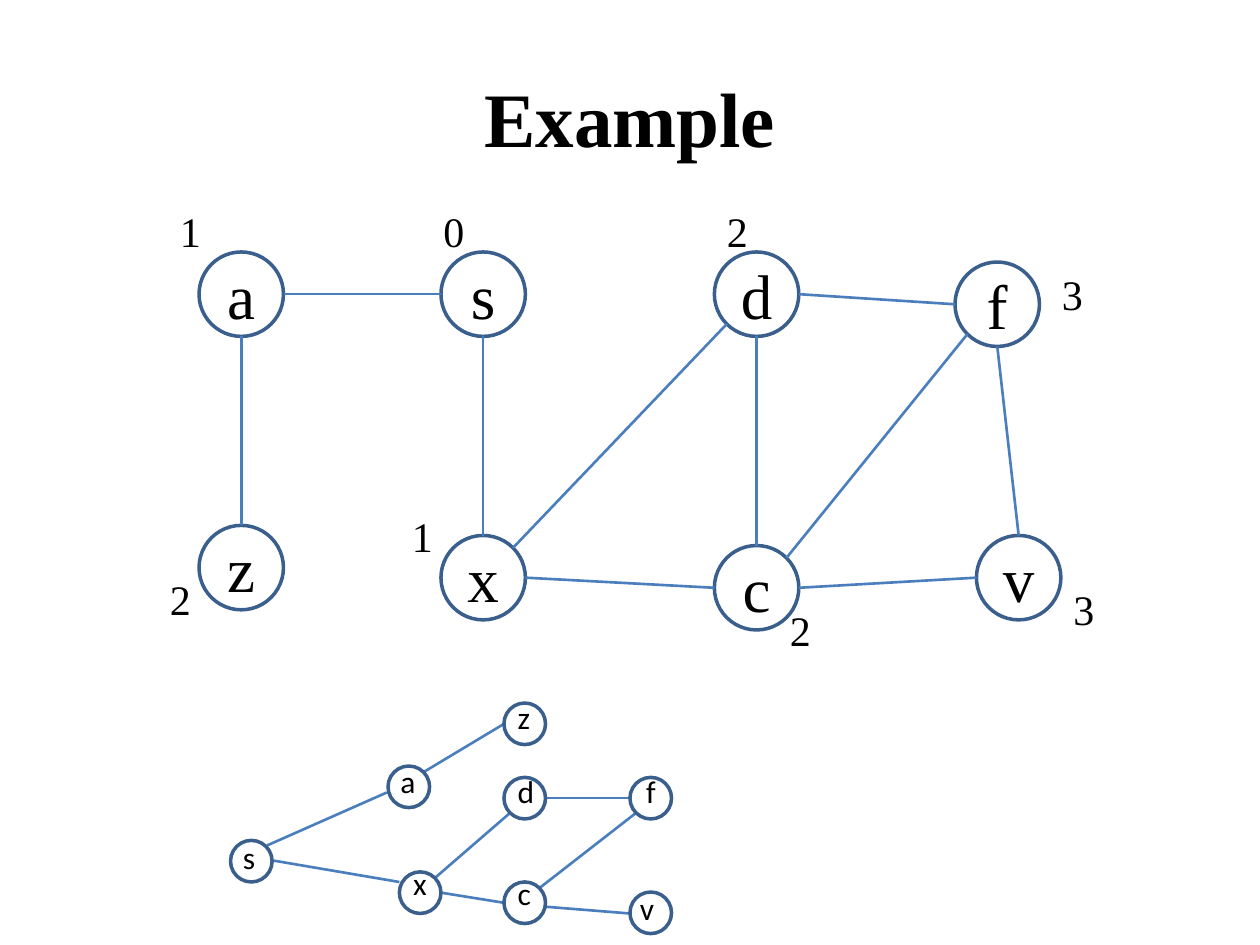
from math import sqrt

from lxml.etree import SubElement
from pptx import Presentation
from pptx.dml.color import RGBColor
from pptx.enum.shapes import MSO_CONNECTOR, MSO_SHAPE
from pptx.enum.text import MSO_ANCHOR, MSO_AUTO_SIZE, PP_ALIGN
from pptx.oxml.ns import qn
from pptx.util import Inches, Pt

BLACK = RGBColor(0x00, 0x00, 0x00)
WHITE = RGBColor(0xFF, 0xFF, 0xFF)
OUTLINE = RGBColor(0x3A, 0x5F, 0x8C)
EDGE = RGBColor(0x4B, 0x7E, 0xBC)
SERIF = "Times New Roman"
SANS = "Calibri"
GRAPH_SIZE = 0.67
TREE_SIZE = 0.33

SITES = {
    "top": (0, -1), "bottom": (0, 1), "left": (-1, 0), "right": (1, 0),
    "top left": (-1, -1), "top right": (1, -1),
    "bottom left": (-1, 1), "bottom right": (1, 1),
}

GRAPH_NODES = {
    "a": (1.58, 2), "c": (5.67, 4.33), "v": (7.75, 4.25), "x": (3.5, 4.25),
    "z": (1.58, 4.17), "s": (3.5, 2), "d": (5.67, 2), "f": (7.58, 2.08),
}
GRAPH_EDGES = [
    ("a", "right", "s", "left"),
    ("a", "bottom", "z", "top"),
    ("s", "bottom", "x", "top"),
    ("d", "bottom left", "x", "top right"),
    ("d", "bottom", "c", "top"),
    ("x", "right", "c", "left"),
    ("d", "right", "f", "left"),
    ("c", "top right", "f", "bottom left"),
    ("f", "bottom", "v", "top"),
    ("v", "left", "c", "right"),
]
DISTANCES = [
    ("1", 1.33, 1.58, 0.33, 0.91), ("1", 3.17, 4, 0.33, 0.91),
    ("2", 1.25, 4.5, 0.33, 0.91), ("0", 3.42, 1.58, 0.33, 0.91),
    ("2", 5.67, 1.58, 0.42, 0.5), ("2", 6.17, 4.75, 0.42, 0.5),
    ("3", 8.42, 4.58, 0.42, 0.5), ("3", 8.33, 2.08, 0.42, 0.5),
]

TREE_NODES = {
    "v": (5, 7.08), "s": (1.83, 6.67), "a": (3.08, 6.08), "x": (3.17, 6.92),
    "z": (4, 5.58), "d": (4, 6.17), "c": (4, 7), "f": (5, 6.17),
}
TREE_LABELS = {
    "v": (4.98, 7.01, 0.32), "s": (1.83, 6.6, 0.3), "a": (3.08, 6, 0.32),
    "x": (3.18, 6.81, 0.32), "z": (4.01, 5.49, 0.3), "d": (4.01, 6.08, 0.33),
    "c": (4.01, 6.89, 0.31), "f": (5.03, 6.08, 0.29),
}
TREE_EDGES = [
    ("c", "top right", "f", "bottom left"),
    ("a", "top right", "z", "left"),
    ("x", "top right", "d", "bottom left"),
    ("x", "right", "c", "left"),
    ("d", "right", "f", "left"),
]
TREE_LOOSE_EDGES = [
    ((4, 7.17), (5, 7.25)),
    ((2.12, 6.71), (3.07, 6.29)),
    ((2.17, 6.83), (3.17, 7)),
]


def write_text(frame, text, size=24, font=SERIF, bold=False,
               align=PP_ALIGN.LEFT, anchor=MSO_ANCHOR.TOP, wrap=True):
    frame.word_wrap = wrap
    frame.vertical_anchor = anchor
    paragraph = frame.paragraphs[0]
    paragraph.alignment = align
    run = paragraph.add_run()
    run.text = text
    run.font.size = Pt(size)
    run.font.name = font
    run.font.bold = bold
    run.font.color.rgb = BLACK


def site_point(corner, size, site):
    across, down = SITES[site]
    radius = size / 2
    reach = radius / sqrt(abs(across) + abs(down))
    left, top = corner
    return left + radius + across * reach, top + radius + down * reach


class GraphSlide:
    def __init__(self, slide):
        self.slide = slide

    def text(self, text, left, top, width, height, grow=True, **style):
        box = self.slide.shapes.add_textbox(
            Inches(left), Inches(top), Inches(width), Inches(height))
        write_text(box.text_frame, text, **style)
        if grow:
            box.text_frame.auto_size = MSO_AUTO_SIZE.SHAPE_TO_FIT_TEXT

    def circle(self, corner, size, text=None):
        left, top = corner
        shape = self.slide.shapes.add_shape(
            MSO_SHAPE.OVAL, Inches(left), Inches(top), Inches(size), Inches(size))
        shape.shadow.inherit = False
        shape.fill.solid()
        shape.fill.fore_color.rgb = WHITE
        shape.line.color.rgb = OUTLINE
        shape.line.width = Pt(2)
        if text:
            write_text(shape.text_frame, text, size=36,
                       align=PP_ALIGN.CENTER, anchor=MSO_ANCHOR.MIDDLE)

    def line(self, start, end):
        connector = self.slide.shapes.add_connector(
            MSO_CONNECTOR.STRAIGHT, *(Inches(value) for value in (*start, *end)))
        connector.line.color.rgb = EDGE
        connector.line.width = Pt(1.5)
        SubElement(connector._element.spPr, qn("a:effectLst"))

    def edges(self, nodes, size, edges):
        for start, start_site, end, end_site in edges:
            self.line(site_point(nodes[start], size, start_site),
                      site_point(nodes[end], size, end_site))


def main():
    presentation = Presentation()
    presentation.slide_width = Inches(10)
    presentation.slide_height = Inches(7.5)
    graph = GraphSlide(presentation.slides.add_slide(presentation.slide_layouts[6]))

    graph.text("Example", 0.5, 0.3, 9, 1.25, grow=False, size=44, bold=True,
               align=PP_ALIGN.CENTER, anchor=MSO_ANCHOR.MIDDLE)

    for name, corner in GRAPH_NODES.items():
        graph.circle(corner, GRAPH_SIZE, name)
    graph.edges(GRAPH_NODES, GRAPH_SIZE, GRAPH_EDGES)
    for distance, *place in DISTANCES:
        graph.text(distance, *place)

    for start, end in TREE_LOOSE_EDGES:
        graph.line(start, end)
    graph.edges(TREE_NODES, TREE_SIZE, TREE_EDGES)
    for name, corner in TREE_NODES.items():
        graph.circle(corner, TREE_SIZE)
        graph.text(name, *TREE_LABELS[name], 0.4, size=18, font=SANS, wrap=False)

    presentation.save("out.pptx")


if __name__ == "__main__":
    main()
